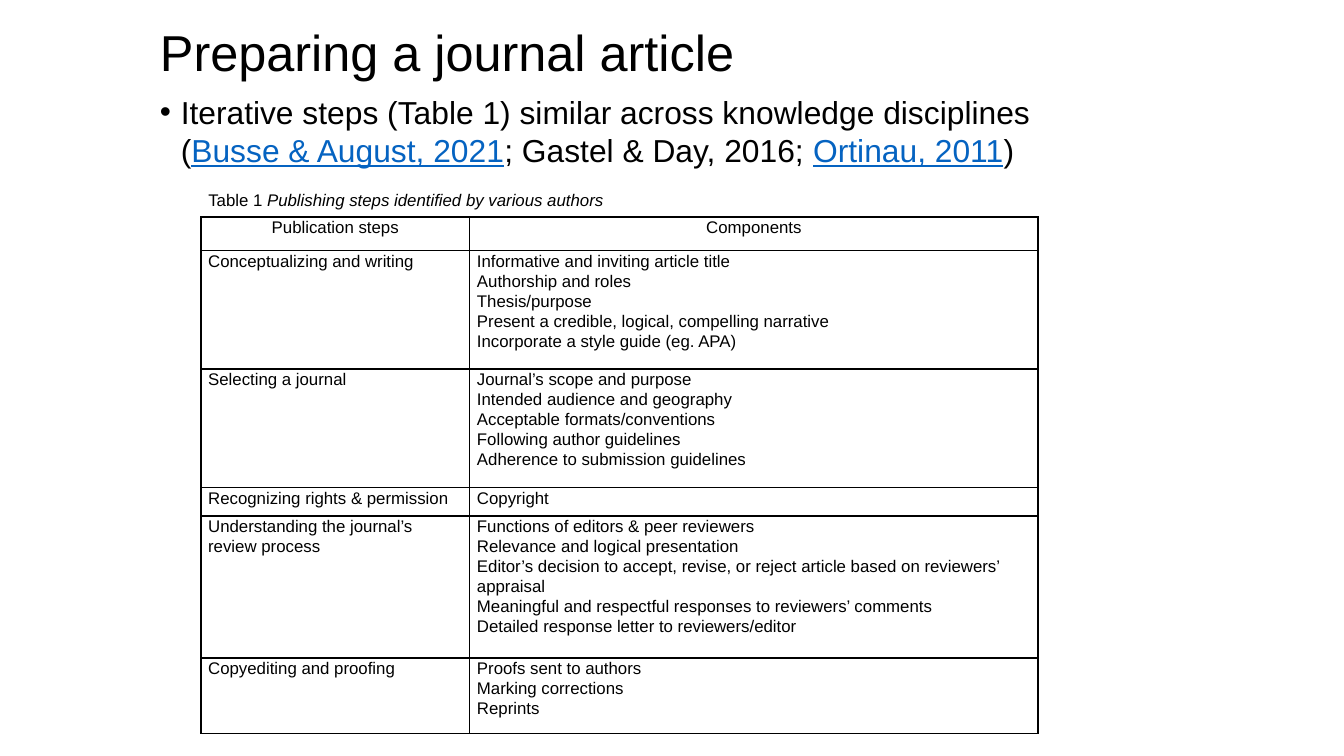
from lxml.etree import SubElement
from pptx import Presentation
from pptx.dml.color import RGBColor
from pptx.enum.text import MSO_ANCHOR as Anchor, PP_ALIGN as Align
from pptx.oxml.ns import qn
from pptx.util import Inches, Pt

BLACK = RGBColor(0x00, 0x00, 0x00)
WHITE = RGBColor(0xFF, 0xFF, 0xFF)
CITATION_BLUE = RGBColor(0x05, 0x63, 0xC1)

HEADER = ("Publication steps", "Components")
STEPS = [
    ("Conceptualizing and writing", [
        "Informative and inviting article title",
        "Authorship and roles",
        "Thesis/purpose",
        "Present a credible, logical, compelling narrative",
        "Incorporate a style guide (eg. APA)",
    ]),
    ("Selecting a journal", [
        "Journal’s scope and purpose",
        "Intended audience and geography",
        "Acceptable formats/conventions",
        "Following author guidelines",
        "Adherence to submission guidelines",
    ]),
    ("Recognizing rights & permission", ["Copyright"]),
    ("Understanding the journal’s review process", [
        "Functions of editors & peer reviewers",
        "Relevance and logical presentation",
        "Editor’s decision to accept, revise, or reject article based on reviewers’ appraisal",
        "Meaningful and respectful responses to reviewers’ comments",
        "Detailed response letter to reviewers/editor",
    ]),
    ("Copyediting and proofing", [
        "Proofs sent to authors",
        "Marking corrections",
        "Reprints",
    ]),
]


class SlideBuilder:
    """Hold the style and current slide, with lengths in grid steps of a tenth of an inch."""

    font_name = "Arial"
    title_size, body_size, table_size = 27, 17, 9

    def __init__(self, presentation):
        self.slide = presentation.slides.add_slide(presentation.slide_layouts[5])

    def grid(self, steps):
        return Inches(steps / 10)

    def place(self, shape, box):
        shape.left, shape.top, shape.width, shape.height = map(self.grid, box)

    def add_run(self, paragraph, text, size, color=BLACK, italic=False, underline=False):
        run = paragraph.add_run()
        run.text = text
        font = run.font
        font.name, font.size = self.font_name, Pt(size)
        font.italic, font.underline = italic, underline
        font.color.rgb = color

    def format_frame(self, frame):
        frame.word_wrap = True
        frame.vertical_anchor = Anchor.TOP
        frame.margin_left = frame.margin_right = self.grid(0.7)
        frame.margin_top = frame.margin_bottom = self.grid(0.4)
        return frame.paragraphs[0]

    def title(self, text, box):
        shape = self.slide.shapes.title
        self.place(shape, box)
        paragraph = self.format_frame(shape.text_frame)
        paragraph.alignment = Align.LEFT
        self.add_run(paragraph, text, self.title_size)

    def text(self, runs, box, size):
        shape = self.slide.shapes.add_textbox(*map(self.grid, box))
        paragraph = self.format_frame(shape.text_frame)
        for text, style in runs:
            self.add_run(paragraph, text, size, **style)
        return paragraph

    def bullet(self, runs, box):
        paragraph = self.text(runs, box, self.body_size)
        properties = paragraph._p.get_or_add_pPr()
        properties.set("marL", str(self.grid(1.55)))
        properties.set("indent", str(-self.grid(1.55)))
        SubElement(properties, qn("a:buFont"), typeface=self.font_name)
        SubElement(properties, qn("a:buChar"), char="•")

    def border(self, cell):
        properties = cell._tc.get_or_add_tcPr()
        for position, side in enumerate(("lnL", "lnR", "lnT", "lnB")):
            line = properties.makeelement(qn(f"a:{side}"), {"w": str(Pt(1))})
            fill = SubElement(line, qn("a:solidFill"))
            SubElement(fill, qn("a:srgbClr"), val=str(BLACK))
            properties.insert(position, line)

    def cell(self, cell, lines, alignment):
        cell.margin_left = cell.margin_right = self.grid(0.55)
        cell.margin_top = cell.margin_bottom = 0
        cell.fill.solid()
        cell.fill.fore_color.rgb = WHITE
        self.border(cell)
        frame = cell.text_frame
        for index, line in enumerate(lines):
            paragraph = frame.add_paragraph() if index else frame.paragraphs[0]
            paragraph.alignment = alignment
            paragraph.line_spacing = 1.07
            self.add_run(paragraph, line, self.table_size)

    def table(self, header, rows, left, top, widths, heights):
        box = (left, top, sum(widths), sum(heights))
        table = self.slide.shapes.add_table(
            len(heights), len(widths), *map(self.grid, box)).table
        for column, width in zip(table.columns, widths):
            column.width = self.grid(width)
        for row, height in zip(table.rows, heights):
            row.height = self.grid(height)
        for column, heading in enumerate(header):
            self.cell(table.cell(0, column), [heading], Align.CENTER)
        for row, (step, components) in enumerate(rows, start=1):
            self.cell(table.cell(row, 0), [step], Align.LEFT)
            self.cell(table.cell(row, 1), components, Align.LEFT)


def main():
    presentation = Presentation()
    presentation.slide_width = Inches(10)
    presentation.slide_height = presentation.slide_width * 9 // 16
    builder = SlideBuilder(presentation)
    citation = {"color": CITATION_BLUE, "underline": True}

    builder.title("Preparing a journal article", (11.2, 1.2, 52.1, 5.3))
    builder.bullet([
        ("Iterative steps (Table 1) similar across knowledge disciplines (", {}),
        ("Busse & August, 2021", citation),
        ("; Gastel & Day, 2016; ", {}),
        ("Ortinau, 2011", citation),
        (")", {}),
    ], (11.2, 6.5, 71.5, 6.3))
    builder.text([
        ("Table 1 ", {}),
        ("Publishing steps identified by various authors", {"italic": True}),
    ], (14.8, 13.7, 37.3, 2.3), builder.table_size)
    builder.table(HEADER, STEPS, 14.94, 16.14, (20, 42.3),
                  (2.5, 8.82, 8.82, 2.1, 10.6, 5.6))
    presentation.save("out.pptx")


if __name__ == "__main__":
    main()
